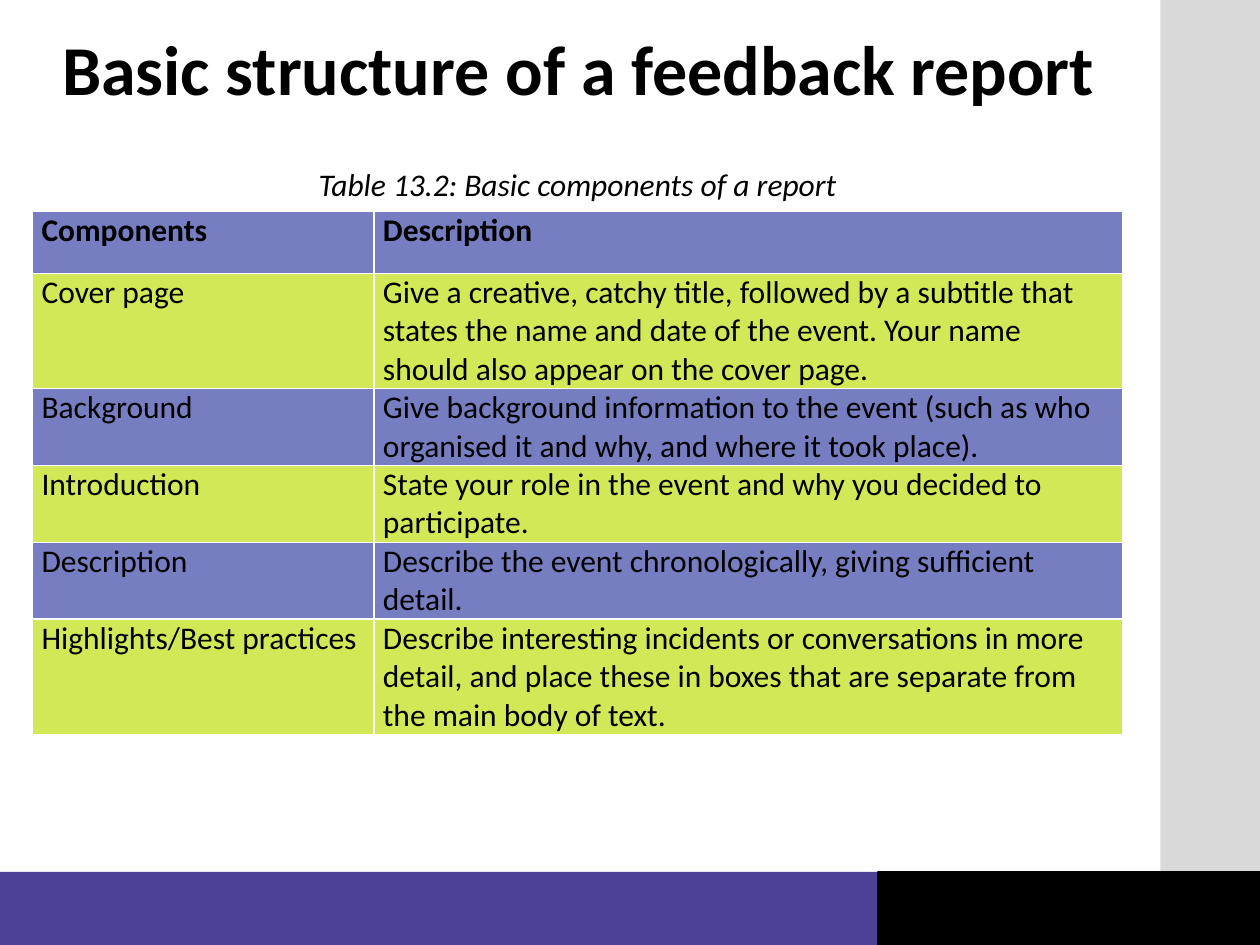
import dataclasses

import lxml.etree
import pptx
import pptx.dml.color
import pptx.enum.shapes
import pptx.enum.text
import pptx.oxml.ns
import pptx.util

Inches = pptx.util.Inches
Pt = pptx.util.Pt
ALIGN = pptx.enum.text.PP_ALIGN
ANCHOR = pptx.enum.text.MSO_ANCHOR
FONT = "Calibri"
COLORS = {
    "text": "000000",
    "side": "D9D9D9",
    "footer": "4D4197",
    "corner": "000000",
    "violet": "767DC0",
    "lime": "D3E856",
    "border": "FFFFFF",
}
HEADER_HEIGHT = 0.49
LINE_HEIGHT = 0.305
COLUMN_WIDTHS = (2.71, 5.94)


@dataclasses.dataclass
class Box:
    left: float
    top: float
    width: float
    height: float

    def lengths(self) -> tuple:
        return tuple(Inches(v) for v in (self.left, self.top, self.width, self.height))


@dataclasses.dataclass
class Band:
    box: Box
    color: str
    outlined: bool = False


@dataclasses.dataclass
class Label:
    box: Box
    text: str
    size: float
    spacing: float
    anchor: ANCHOR
    bold: bool = False
    italic: bool = False


@dataclasses.dataclass
class Component:
    name: str
    description: str
    lines: int


BANDS = [
    Band(Box(9.21, 0, 0.79, 7.48), "side"),
    Band(Box(0, 6.92, 10, 0.58), "footer"),
    Band(Box(6.97, 6.92, 3.03, 0.58), "corner", True),
]
LABELS = [
    Label(Box(0, 0, 9.18, 1.16), "Basic structure of a feedback report",
          40, 0.9, ANCHOR.MIDDLE, bold=True),
    Label(Box(0.26, 1.32, 8.65, 0.36), "Table 13.2: Basic components of a report",
          18, 0.8, ANCHOR.TOP, italic=True),
]
COMPONENTS = [
    Component("Cover page", "Give a creative, catchy title, followed by a subtitle that "
              "states the name and date of the event. Your name should also appear on "
              "the cover page.", 3),
    Component("Background", "Give background information to the event (such as who "
              "organised it and why, and where it took place).", 2),
    Component("Introduction", "State your role in the event and why you decided to "
              "participate.", 2),
    Component("Description", "Describe the event chronologically, giving sufficient "
              "detail.", 2),
    Component("Highlights/Best practices", "Describe interesting incidents or "
              "conversations in more detail, and place these in boxes that are separate "
              "from the main body of text.", 3),
]


def rgb(name: str) -> pptx.dml.color.RGBColor:
    return pptx.dml.color.RGBColor.from_string(COLORS[name])


def add_run(p, text: str, size: float, bold: bool = False, italic: bool = False) -> None:
    r = p.add_run()
    r.text = text
    r.font.name = FONT
    r.font.size = Pt(size)
    r.font.bold = bold
    r.font.italic = italic
    r.font.color.rgb = rgb("text")


def add_band(s, band: Band) -> None:
    sp = s.shapes.add_shape(pptx.enum.shapes.MSO_SHAPE.RECTANGLE, *band.box.lengths())
    sp.shadow.inherit = False
    sp.fill.solid()
    sp.fill.fore_color.rgb = rgb(band.color)
    if band.outlined:
        sp.line.color.rgb = rgb(band.color)
        sp.line.width = Pt(1)
    else:
        sp.line.fill.background()


def add_label(s, label: Label) -> None:
    tf = s.shapes.add_textbox(*label.box.lengths()).text_frame
    tf.word_wrap = True
    tf.vertical_anchor = label.anchor
    p = tf.paragraphs[0]
    p.alignment = ALIGN.CENTER
    p.line_spacing = label.spacing
    add_run(p, label.text, label.size, label.bold, label.italic)


def add_borders(cell) -> None:
    qn = pptx.oxml.ns.qn
    props = cell._tc.get_or_add_tcPr()
    for side in ("lnL", "lnR", "lnT", "lnB"):
        line = lxml.etree.SubElement(props, qn(f"a:{side}"), w=str(Pt(1)))
        fill = lxml.etree.SubElement(line, qn("a:solidFill"))
        lxml.etree.SubElement(fill, qn("a:srgbClr"), val=COLORS["border"])


def fill_cell(cell, text: str, color: str, bold: bool) -> None:
    cell.margin_left = cell.margin_right = Inches(0.07)
    cell.margin_top = cell.margin_bottom = 0
    add_borders(cell)
    cell.fill.solid()
    cell.fill.fore_color.rgb = rgb(color)
    add_run(cell.text_frame.paragraphs[0], text, 18, bold)


def add_components(s, components: list[Component]) -> None:
    rows = [("Components", "Description")] + [(c.name, c.description) for c in components]
    heights = [HEADER_HEIGHT] + [c.lines * LINE_HEIGHT for c in components]
    box = Box(0.26, 1.68, sum(COLUMN_WIDTHS), sum(heights))
    table = s.shapes.add_table(len(rows), len(COLUMN_WIDTHS), *box.lengths()).table
    for column, width in zip(table.columns, COLUMN_WIDTHS):
        column.width = Inches(width)
    for i, (texts, height) in enumerate(zip(rows, heights)):
        table.rows[i].height = Inches(height)
        for j, text in enumerate(texts):
            fill_cell(table.cell(i, j), text, ("violet", "lime")[i % 2], i == 0)


def main() -> None:
    """Build the slide on the basic structure of a feedback report."""
    prs = pptx.Presentation()
    prs.slide_width, prs.slide_height = Inches(10), Inches(7.5)
    s = prs.slides.add_slide(prs.slide_layouts[6])
    for band in BANDS:
        add_band(s, band)
    for label in LABELS:
        add_label(s, label)
    add_components(s, COMPONENTS)
    prs.save("out.pptx")


if __name__ == "__main__":
    main()
